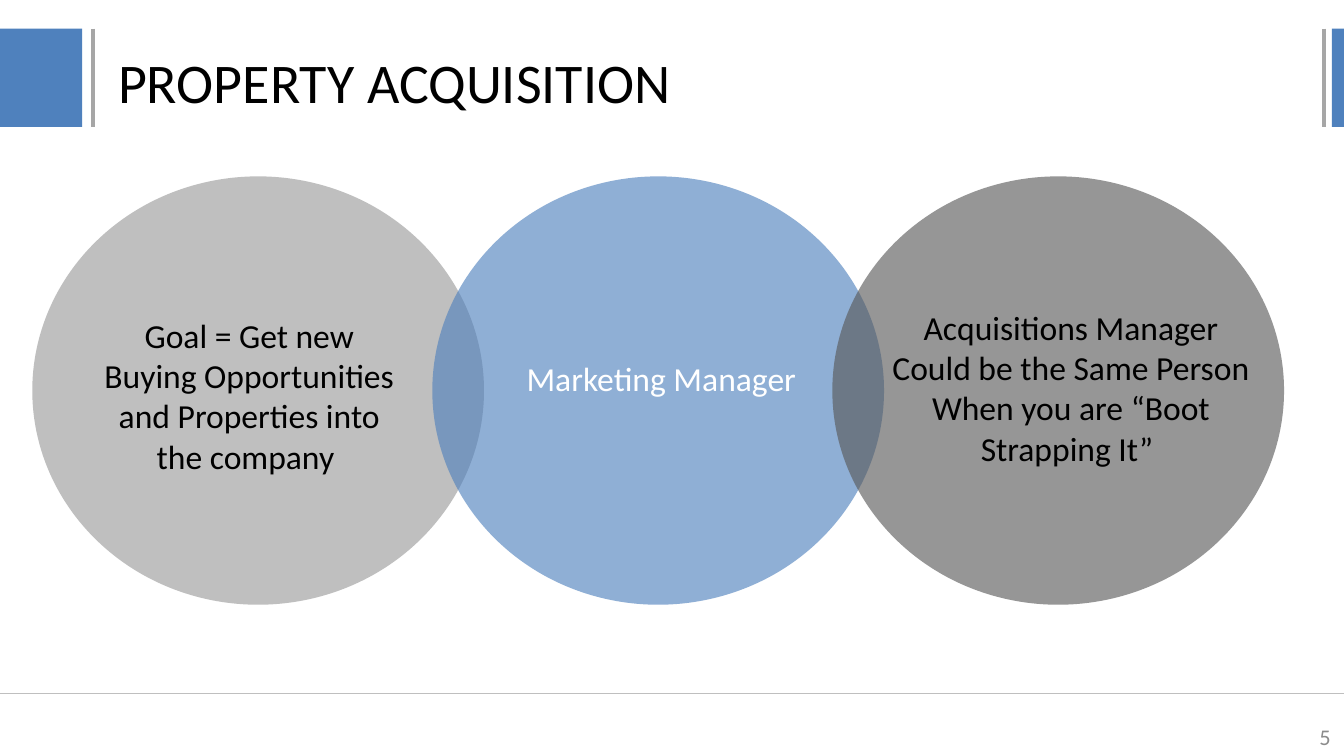
import pptx
import pptx.util
import pptx.dml.color
import pptx.enum.shapes
import pptx.enum.text
import pptx.oxml.ns
from dataclasses import dataclass
from lxml import etree

Pt = pptx.util.Pt
Shape = pptx.enum.shapes.MSO_SHAPE
Align = pptx.enum.text.PP_ALIGN
Anchor = pptx.enum.text.MSO_ANCHOR
qn = pptx.oxml.ns.qn


@dataclass(frozen=True)
class Theme:
    """Colours, font and type sizes of the slide."""
    blue: str = "4F81BD"
    light: str = "BFBFBF"
    dark: str = "595959"
    bar: str = "A6A6A6"
    ink: str = "000000"
    white: str = "FFFFFF"
    faint: str = "8C8C8C"
    font: str = "Calibri"
    title: int = 30
    body: int = 18
    small: int = 12


THEME = Theme()


def color(code):
    """Turn a hex code into a colour."""
    return pptx.dml.color.RGBColor.from_string(code)


def add_form(slide, kind, box, fill, alpha=100):
    """Add a filled shape without outline, see-through if alpha is below 100."""
    form = slide.shapes.add_shape(kind, *map(Pt, box))
    form.shadow.inherit = False
    form.fill.solid()
    form.fill.fore_color.rgb = color(fill)
    form.line.fill.background()
    if alpha < 100:
        tint = form._element.spPr.find(qn("a:solidFill"))[0]
        etree.SubElement(tint, qn("a:alpha")).set("val", str(alpha * 1000))
    return form


def add_rule(slide, start, end, tone, width):
    """Add a straight line between two points."""
    kind = pptx.enum.shapes.MSO_CONNECTOR.STRAIGHT
    rule = slide.shapes.add_connector(kind, *map(Pt, (*start, *end)))
    rule.line.color.rgb = color(tone)
    rule.line.width = Pt(width)
    etree.SubElement(rule._element.spPr, qn("a:effectLst"))
    return rule


def add_text(slide, box, lines, size, tone, align=Align.LEFT,
             anchor=Anchor.TOP, wrap=True):
    """Add a text box with one paragraph for each line."""
    frame = slide.shapes.add_textbox(*map(Pt, box)).text_frame
    frame.word_wrap = wrap
    frame.vertical_anchor = anchor
    frame.text = "\n".join(lines)
    for para in frame.paragraphs:
        para.alignment = align
        para.font.name = THEME.font
        para.font.size = Pt(size)
        para.font.color.rgb = color(tone)


def add_header(slide, box, title):
    """Draw the title between blue blocks and grey bars at both edges."""
    left, top, width, height = box
    right = left + width
    add_form(slide, Shape.RECTANGLE, (right - 6.5, top, 6.5, height), THEME.blue)
    add_form(slide, Shape.RECTANGLE, (left, top, 44, height), THEME.blue)
    for x in (left + 50, right - 10.8):
        add_rule(slide, (x, top), (x, top + height), THEME.bar, 2.25)
    add_text(slide, (left + 56.2, top + 1.2, 645, 54), [title],
             THEME.title, THEME.ink, anchor=Anchor.MIDDLE)


def add_rings(slide, box):
    """Draw three overlapping ellipses with their captions."""
    left, top, width, height = box
    size = 242
    step = (width - size) / 2
    looks = ((THEME.light, 100), (THEME.blue, 63), (THEME.dark, 63))
    for i, (fill, alpha) in enumerate(looks):
        add_form(slide, Shape.OVAL, (left + i * step, top, size, height), fill, alpha)
    add_text(slide, (left + 28, top + 70.5, 176.5, 94.5),
             ["Goal = Get new Buying Opportunities and Properties into the company "],
             THEME.body, THEME.ink, Align.CENTER)
    add_text(slide, (left + 257.7, top + 93.8, 166.3, 29), ["Marketing Manager"],
             THEME.body, THEME.white, wrap=False)
    add_text(slide, (left + 442.7, top + 66.2, 227.5, 94.5),
             ["Acquisitions Manager",
              "Could be the Same Person When you are “Boot Strapping It” "],
             THEME.body, THEME.ink, Align.CENTER)


def add_footer(slide, box, number):
    """Draw the bottom rule and the slide number."""
    left, top, width, height = box
    add_rule(slide, (left, top), (left + width, top), THEME.light, 0.75)
    add_text(slide, (left + width - 168, top + 12.5, 168, 21.6), [number],
             THEME.small, THEME.faint, Align.RIGHT, Anchor.MIDDLE)


def main():
    """Build the slide and save it."""
    deck = pptx.Presentation()
    deck.slide_width, deck.slide_height = Pt(720), Pt(405)
    slide = deck.slides.add_slide(deck.slide_layouts[6])
    add_header(slide, (0, 15.4, 720, 52.6), "PROPERTY ACQUISITION")
    add_rings(slide, (17.3, 94.5, 670.6, 229.5))
    add_footer(slide, (0, 371.5, 720, 33.5), "5")
    deck.save("out.pptx")


if __name__ == "__main__":
    main()
